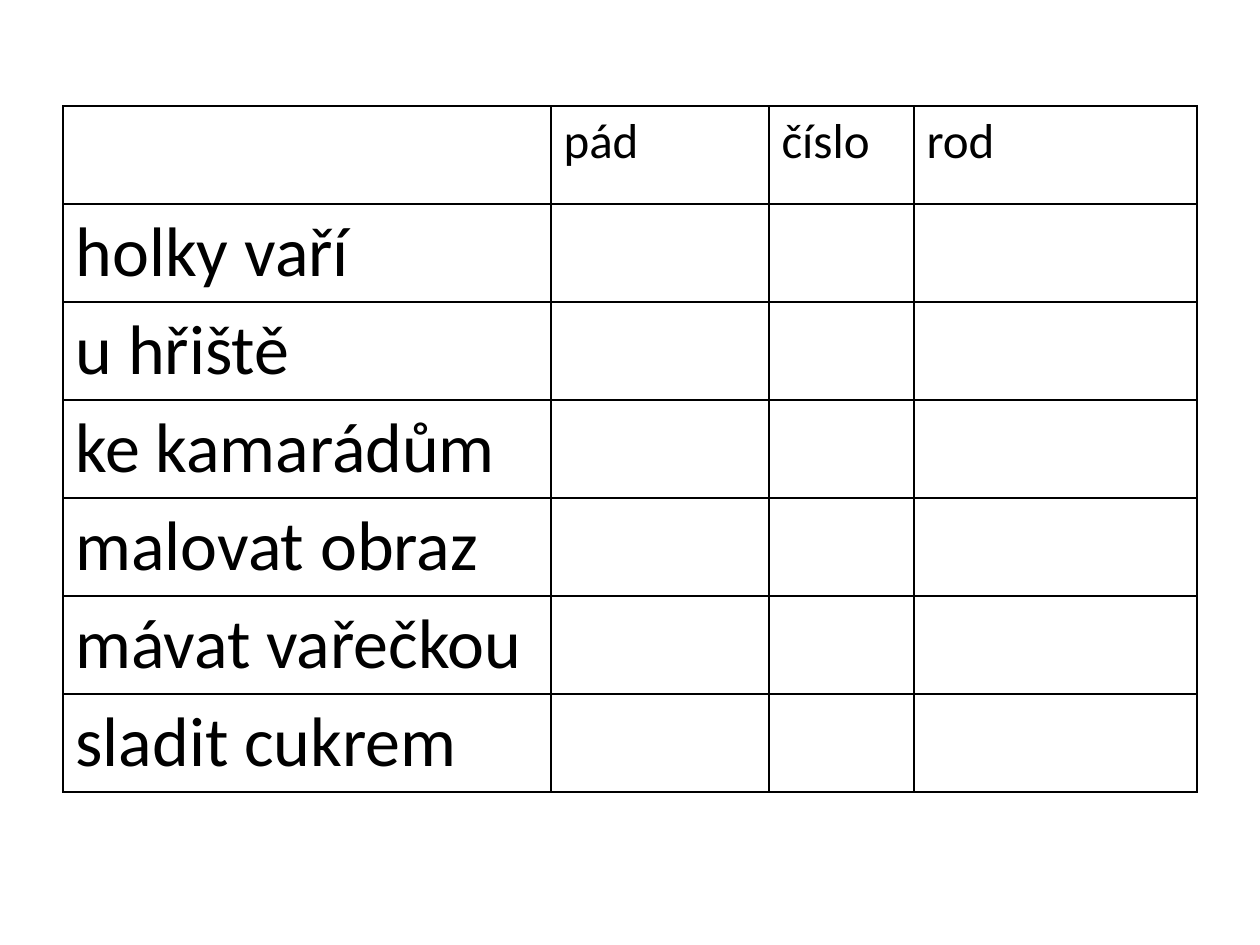
from lxml import etree
from pptx import Presentation
from pptx.dml.color import RGBColor
from pptx.oxml.ns import qn
from pptx.util import Pt

PX = 914400 / 126
BLACK = RGBColor(0, 0, 0)
HEADS = ["", "pád", "číslo", "rod"]
TERMS = ["holky vaří", "u hřiště", "ke kamarádům",
         "malovat obraz", "mávat vařečkou", "sladit cukrem"]
WIDTHS = [488, 218, 145, 283]
ROW = 98


def px(n):
    return round(n * PX)


def frame(cell):
    props = cell._tc.get_or_add_tcPr()
    for side in ("a:lnL", "a:lnR", "a:lnT", "a:lnB"):
        line = etree.SubElement(props, qn(side), w=str(Pt(1)))
        fill = etree.SubElement(line, qn("a:solidFill"))
        etree.SubElement(fill, qn("a:srgbClr"), val=str(BLACK))
    cell.fill.background()


deck = Presentation()
deck.slide_width = px(1260)
deck.slide_height = px(945)
slide = deck.slides.add_slide(deck.slide_layouts[6])

rows = [HEADS] + [[term, "", "", ""] for term in TERMS]
table = slide.shapes.add_table(
    len(rows), len(WIDTHS), px(63), px(106),
    px(sum(WIDTHS)), px(ROW * len(rows))).table
table.first_row = False
table.horz_banding = False
for col, width in zip(table.columns, WIDTHS):
    col.width = px(width)

for r, words in enumerate(rows):
    table.rows[r].height = px(ROW)
    for c, word in enumerate(words):
        cell = table.cell(r, c)
        frame(cell)
        if word:
            cell.text_frame.text = word
            font = cell.text_frame.paragraphs[0].runs[0].font
            font.name = "Calibri"
            font.size = Pt(40 if r else 28)
            font.color.rgb = BLACK

deck.save("out.pptx")
